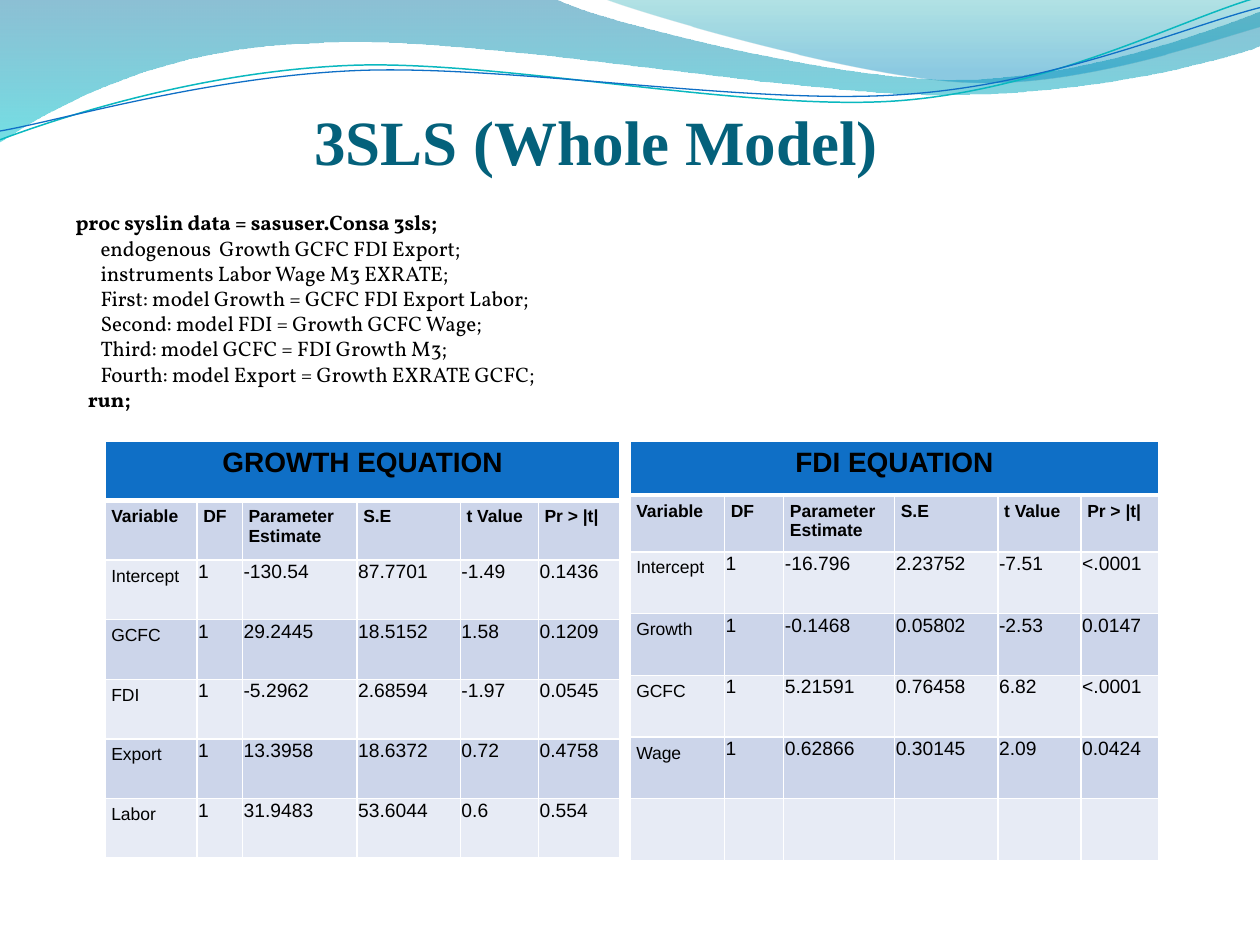
from math import cos, radians, sin

from lxml.etree import SubElement
from pptx import Presentation
from pptx.dml.color import RGBColor
from pptx.enum.text import MSO_ANCHOR, PP_ALIGN
from pptx.oxml import parse_xml
from pptx.oxml.ns import nsdecls, qn
from pptx.util import Inches, Pt

BLUE, PALE, PALER, WHITE = "0F6FC6", "CCD5EA", "E7EBF5", "FFFFFF"
LINE_ANGLE = -2.7

# Each wave is a start point followed by segments: 2 numbers for a line, 6 for a Bézier curve.
LEFT_WAVE = [
    (0, 0), (4.4, -0.01),
    (4.76, 0.17, 6.64, 0.63, 7.58, 0.63), (8.53, 0.63, 9.58, 0.26, 10, 0.09),
    (10.01, 0.36),
    (9.83, 0.44, 8.7, 0.76, 7.46, 0.75), (6.22, 0.75, 3.82, 0.28, 2.57, 0.34),
    (1.29, 0.36, 0.46, 0.83, -0.01, 1.13), (0, 0),
]
RIGHT_WAVE = [
    (4.79, -0.01),
    (5.09, 0.11, 6.82, 0.62, 7.69, 0.65), (8.56, 0.69, 9.61, 0.32, 10, 0.21),
    (10, 0), (4.79, -0.01),
]
TEAL_LINE = [
    (0, 1.11),
    (0.48, 0.93, 1.58, 0.57, 2.77, 0.52), (3.95, 0.47, 5.93, 0.89, 7.13, 0.8),
    (8.33, 0.71, 9.38, 0.15, 9.98, -0.02),
]
BLUE_LINE = [
    (0, 1.04),
    (0.47, 0.96, 1.64, 0.61, 2.83, 0.56), (4.03, 0.51, 5.97, 0.84, 7.17, 0.75),
    (8.36, 0.67, 9.41, 0.21, 10, 0.06),
]

# Text, left indent in inches, bold
CODE = [
    ("proc syslin data = sasuser.Consa 3sls;", 0, True),
    ("endogenous  Growth GCFC FDI Export;", 0.2, False),
    ("instruments Labor Wage M3 EXRATE;", 0.2, False),
    ("First: model Growth = GCFC FDI Export Labor;", 0.2, False),
    ("Second: model FDI = Growth GCFC Wage;", 0.2, False),
    ("Third: model GCFC = FDI Growth M3;", 0.2, False),
    ("Fourth: model Export = Growth EXRATE GCFC;", 0.2, False),
    ("run;", 0.1, True),
]

HEADINGS = ["Variable", "DF", "Parameter\vEstimate", "S.E", "t Value", "Pr > |t|"]
GROWTH = [
    ["Intercept", "1", "-130.54", "87.7701", "-1.49", "0.1436"],
    ["GCFC", "1", "29.2445", "18.5152", "1.58", "0.1209"],
    ["FDI", "1", "-5.2962", "2.68594", "-1.97", "0.0545"],
    ["Export", "1", "13.3958", "18.6372", "0.72", "0.4758"],
    ["Labor", "1", "31.9483", "53.6044", "0.6", "0.554"],
]
FDI = [
    ["Intercept", "1", "-16.796", "2.23752", "-7.51", "<.0001"],
    ["Growth", "1", "-0.1468", "0.05802", "-2.53", "0.0147"],
    ["GCFC", "1", "5.21591", "0.76458", "6.82", "<.0001"],
    ["Wage", "1", "0.62866", "0.30145", "2.09", "0.0424"],
    [""] * 6,
]


def rgb(color):
    return RGBColor.from_string(color)


def format_runs(p, font, size, color, bold=False):
    for r in p.runs:
        r.font.name, r.font.size, r.font.bold = font, Pt(size), bold
        r.font.color.rgb = rgb(color)


def set_margins(tf, left, top, right, bottom):
    tf.margin_left, tf.margin_top = Inches(left), Inches(top)
    tf.margin_right, tf.margin_bottom = Inches(right), Inches(bottom)


def to_frame(x, y, frame, angle):
    """Turn a slide point back by the frame's rotation and measure it from the frame's corner."""
    left, top, width, height = frame
    dx, dy = x - left - width / 2, y - top - height / 2
    c, d = cos(radians(angle)), sin(radians(angle))
    return Inches(width / 2 + dx * c + dy * d), Inches(height / 2 - dx * d + dy * c)


def add_wave(s, outline, frame, angle=0):
    """Freeform with true Bézier curves inside the given frame."""
    left, top, width, height = map(Inches, frame)
    builder = s.shapes.build_freeform(left, top)
    builder.add_line_segments([(left + width, top + height)], close=False)
    sp = builder.convert_to_shape()
    sp.shadow.inherit = False
    sp.rotation = angle
    curve = next(sp._element.iter(qn("a:path")))
    for child in list(curve):
        curve.remove(child)
    for i, segment in enumerate(outline):
        kind = "moveTo" if i == 0 else "lnTo" if len(segment) == 2 else "cubicBezTo"
        parent = SubElement(curve, qn(f"a:{kind}"))
        for x, y in zip(segment[::2], segment[1::2]):
            px, py = to_frame(x, y, frame, angle)
            SubElement(parent, qn("a:pt"), x=str(px), y=str(py))
    if outline[0] == outline[-1]:
        SubElement(curve, qn("a:close"))
    return sp


def add_filled_wave(s, outline, frame, stops):
    """Wave with a downward gradient; stops are position, colour and opacity in percent."""
    sp = add_wave(s, outline, frame)
    sp.line.fill.background()
    stop_xml = "".join(
        f'<a:gs pos="{pos * 1000}"><a:srgbClr val="{color}">'
        f'<a:alpha val="{alpha * 1000}"/></a:srgbClr></a:gs>'
        for pos, color, alpha in stops)
    gradient = parse_xml(
        f'<a:gradFill {nsdecls("a")} rotWithShape="1"><a:gsLst>{stop_xml}</a:gsLst>'
        '<a:lin ang="5400000" scaled="0"/></a:gradFill>')
    sp._element.spPr.find(qn("a:custGeom")).addnext(gradient)


def add_wave_line(s, outline, frame, color, width):
    sp = add_wave(s, outline, frame, LINE_ANGLE)
    sp.fill.background()
    sp.line.color.rgb = rgb(color)
    sp.line.width = Pt(width)


def add_text_box(s, left, top, width, height):
    tf = s.shapes.add_textbox(*map(Inches, (left, top, width, height))).text_frame
    tf.word_wrap = True
    return tf


def add_title(s, text):
    tf = add_text_box(s, 1 / 3, 0.5, 8.92, 11 / 12)
    set_margins(tf, 0, 0.05, 0, 0)
    tf.vertical_anchor = MSO_ANCHOR.BOTTOM
    tf.text = text
    p = tf.paragraphs[0]
    p.alignment = PP_ALIGN.CENTER
    format_runs(p, "Times New Roman", 36, "04617B", True)


def add_code(s, lines):
    tf = add_text_box(s, 0.5, 17 / 12, 7, 23 / 12)
    set_margins(tf, 0.1, 0.25, 0.1, 0.05)
    tf.text = "\n".join(text for text, _, _ in lines)
    for p, (_, indent, bold) in zip(tf.paragraphs, lines):
        p._p.get_or_add_pPr().set("marL", str(Inches(indent)))
        format_runs(p, "Vollkorn", 12, "000000", bold)


def set_borders(cell, top=1, bottom=1):
    tcPr = cell._tc.get_or_add_tcPr()
    for i, (side, width) in enumerate(zip("LRTB", (1, 1, top, bottom))):
        ln = SubElement(tcPr, qn(f"a:ln{side}"), w=str(Pt(width)))
        SubElement(SubElement(ln, qn("a:solidFill")), qn("a:srgbClr"), val=WHITE)
        tcPr.insert(i, ln)


def fill_cell(cell, text, row, col):
    cell.fill.solid()
    cell.fill.fore_color.rgb = rgb(BLUE if row == 0 else PALE if row % 2 else PALER)
    set_borders(cell, top=3 if row == 1 else 1, bottom=3 if row == 0 else 1)
    is_value = row > 1 and col > 0
    set_margins(cell, *((0.01, 0.01, 0.01, 0) if is_value else (0.05,) * 4))
    if not text:
        return
    cell.text = text
    p = cell.text_frame.paragraphs[0]
    if row == 0:
        p.alignment = PP_ALIGN.CENTER
    size = 16 if row == 0 else 11 if is_value else 10
    format_runs(p, "Arial", size, "000000", row < 2)


def add_equation_table(s, left, title, values, widths, heights):
    rows = [[title] + [""] * 5, HEADINGS] + values
    frame = s.shapes.add_table(len(rows), len(widths), Inches(left), Inches(3.5),
                               Inches(sum(widths)), Inches(sum(heights)))
    table = frame.table
    table.first_row = table.horz_banding = False
    for column, width in zip(table.columns, widths):
        column.width = Inches(width)
    for row, height in zip(table.rows, heights):
        row.height = Inches(height)
    for i, texts in enumerate(rows):
        for j, text in enumerate(texts):
            fill_cell(table.cell(i, j), text, i, j)
    table.cell(0, 0).merge(table.cell(0, len(widths) - 1))


def main():
    prs = Presentation()
    prs.slide_width, prs.slide_height = Inches(10), Inches(7.5)
    s = prs.slides.add_slide(prs.slide_layouts[6])
    add_filled_wave(s, LEFT_WAVE, (-0.01, -0.01, 10.02, 1.14),
                    [(0, "0074A1", 45), (100, "00C6CF", 55)])
    add_filled_wave(s, RIGHT_WAVE, (4.79, -0.01, 5.21, 0.7),
                    [(0, "00A1A9", 30), (80, "008BBF", 45)])
    add_wave_line(s, TEAL_LINE, (-0.02, 0.22, 10.02, 0.71), "0AB8BF", 0.85)
    add_wave_line(s, BLUE_LINE, (-0.02, 0.3, 10.03, 0.58), BLUE, 0.75)
    add_title(s, "3SLS (Whole Model) ")
    add_code(s, CODE)
    add_equation_table(s, 5 / 6, "GROWTH EQUATION", GROWTH,
                       [0.73, 0.36, 0.91, 0.82, 0.62, 0.65], [3.31 / 7] * 7)
    add_equation_table(s, 5, "FDI EQUATION", FDI,
                       [0.75, 0.47, 0.88, 0.82, 0.66, 0.62], [0.43, 0.45] + [0.49] * 5)
    prs.save("out.pptx")


if __name__ == "__main__":
    main()
